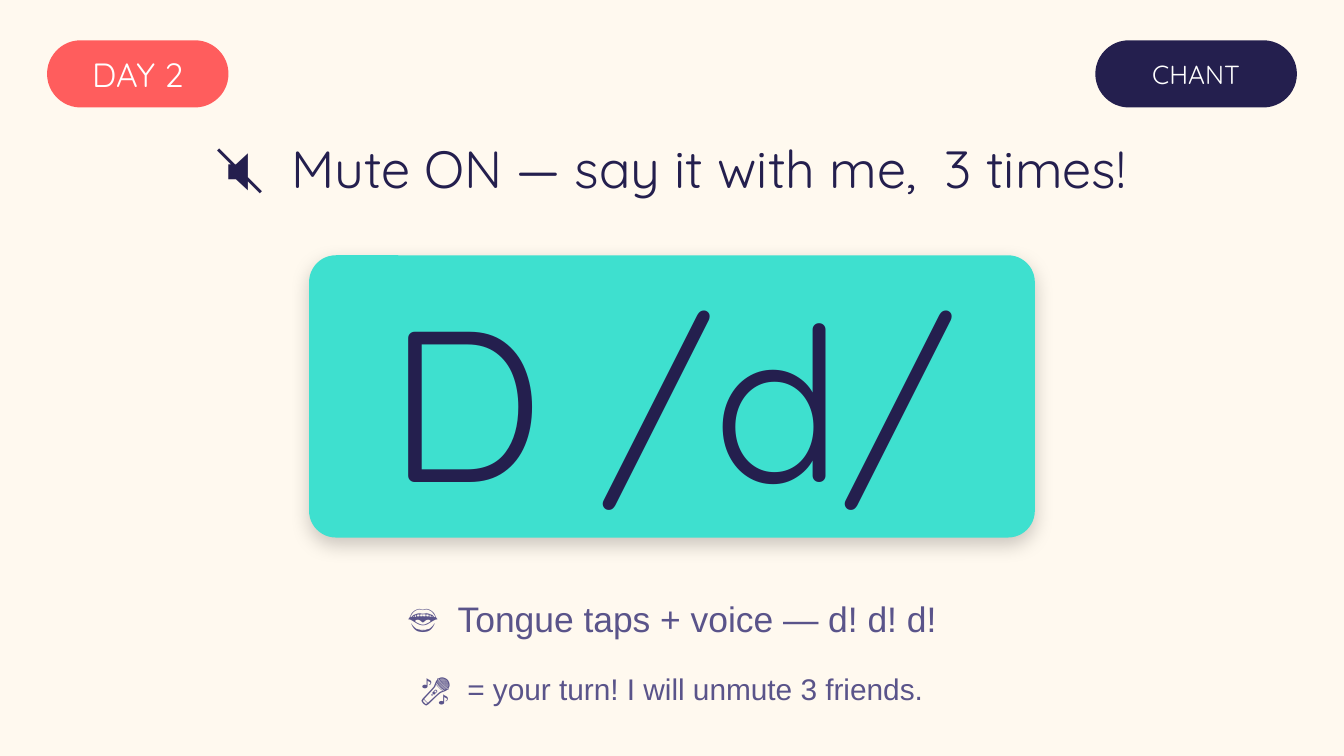
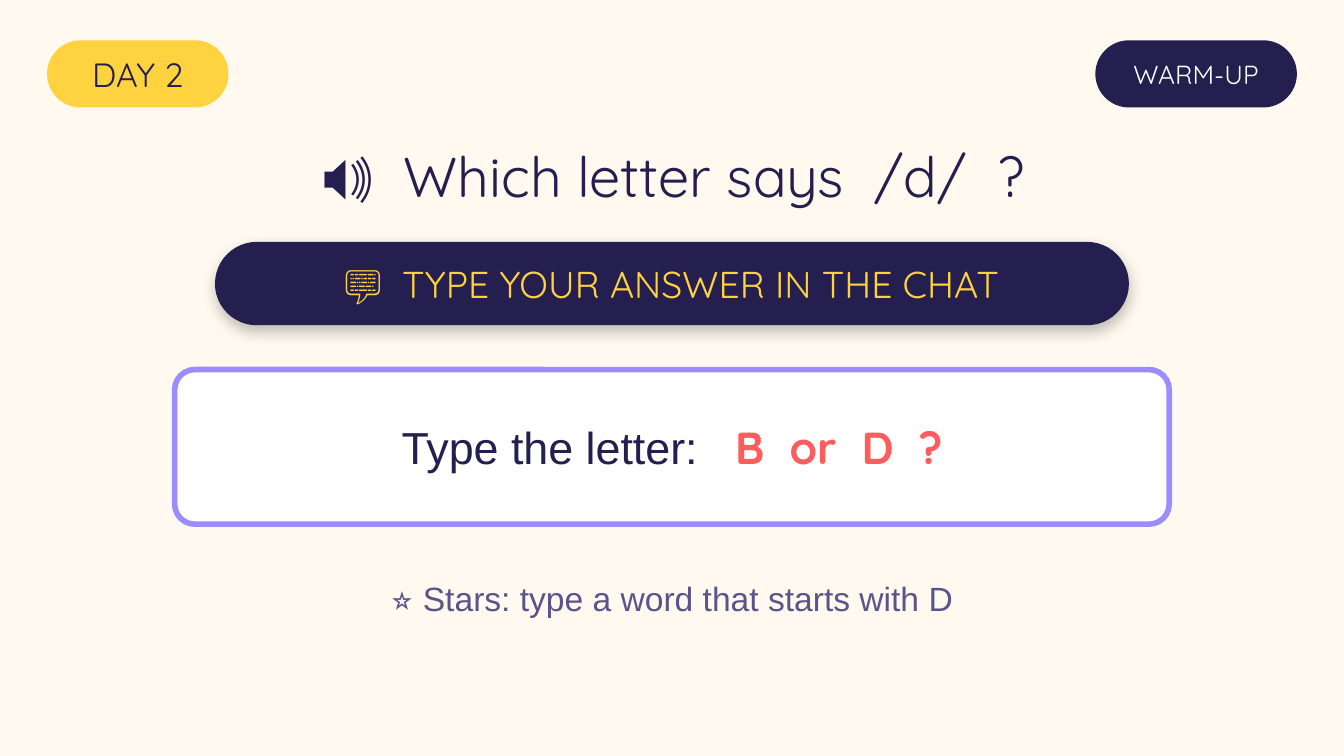
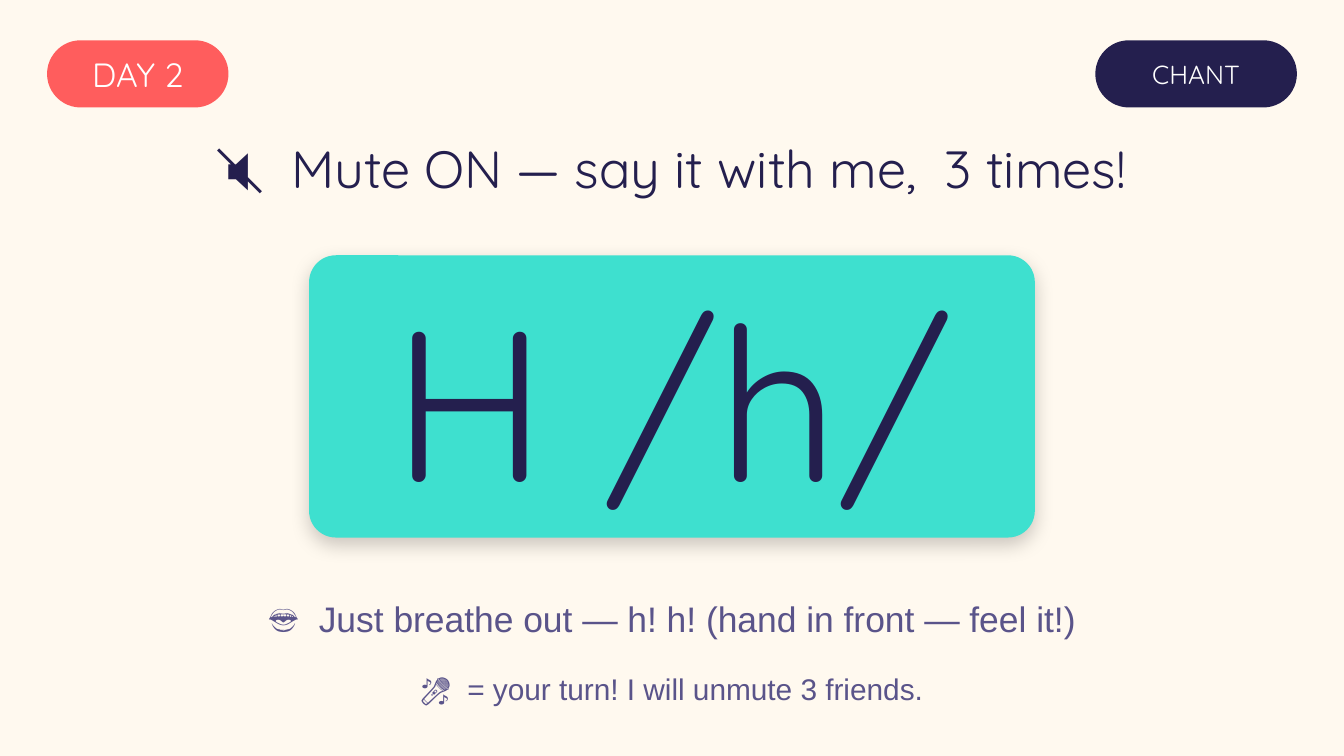
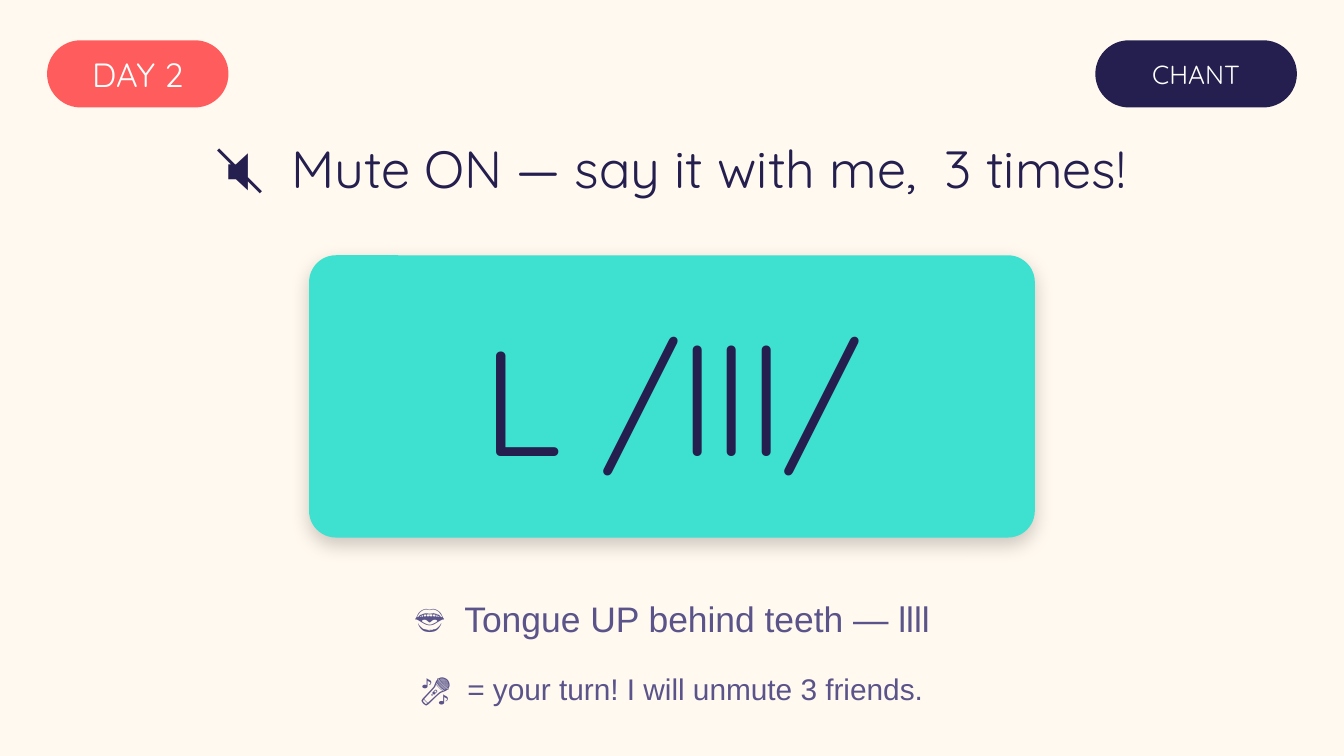
import pptx
import pptx.util
import pptx.dml.color
import pptx.enum.shapes
import pptx.enum.text
import pptx.oxml
import pptx.oxml.ns

Inches = pptx.util.Inches
WIDE = 10
HIGH = WIDE * 9 / 16
CREAM, WHITE, NAVY, PLUM = "FFF9EF", "FFFFFF", "241F4E", "5A548A"
CORAL, GOLD, TEAL, LILAC = "FF5D5D", "FFD23F", "3EE0CF", "9B8CFF"
ROUND, PLAIN = "Quicksand", "Arial"
FRAME = {
    "word_wrap": True,
    "vertical_anchor": pptx.enum.text.MSO_ANCHOR.MIDDLE,
    "margin_left": 0, "margin_right": 0, "margin_top": 0, "margin_bottom": 0,
}


def paint(hue):
    return pptx.dml.color.RGBColor.from_string(hue)


def apply(target, values):
    for name, value in values.items():
        setattr(target, name, value)


def style(size, hue, name=ROUND, bold=False):
    return {"size": size, "hue": hue, "name": name, "bold": bold}


def write(shape, *runs):
    frame = shape.text_frame
    apply(frame, FRAME)
    line = frame.paragraphs[0]
    line.alignment = pptx.enum.text.PP_ALIGN.CENTER
    for text, look in runs:
        run = line.add_run()
        run.text = text
        apply(run.font, {"size": pptx.util.Pt(look["size"]),
                         "name": look["name"], "bold": look["bold"]})
        run.font.color.rgb = paint(look["hue"])


def label(slide, box, text, look):
    area = slide.shapes.add_textbox(*map(Inches, box))
    write(area, (text, look))


def shade(shape, alpha, blur, drop):
    tag = pptx.oxml.ns.nsdecls("a")
    glow = pptx.oxml.parse_xml(
        f'<a:outerShdw {tag} blurRad="{pptx.util.Pt(blur)}" '
        f'dist="{pptx.util.Pt(drop)}" dir="5400000" algn="bl" rotWithShape="0">'
        f'<a:srgbClr val="000000"><a:alpha val="{alpha * 1000}"/></a:srgbClr>'
        '</a:outerShdw>')
    shape.element.spPr.find(pptx.oxml.ns.qn("a:effectLst")).append(glow)


def panel(slide, box, fill, bend, *runs, edge=None, shadow=None):
    kind = pptx.enum.shapes.MSO_SHAPE.ROUNDED_RECTANGLE
    shape = slide.shapes.add_shape(kind, *map(Inches, box))
    shape.adjustments[0] = bend
    shape.fill.solid()
    shape.fill.fore_color.rgb = paint(fill)
    shape.shadow.inherit = False
    if edge:
        shape.line.color.rgb = paint(edge)
        shape.line.width = pptx.util.Pt(3)
    else:
        shape.line.fill.background()
    if shadow:
        shade(shape, *shadow)
    write(shape, *runs)


def header(slide, box, fill, ink, topic):
    left, top, width, height = box
    day, tag = 1.35, 1.5
    panel(slide, (left, top, day, height), fill, 0.5, ("DAY 2", style(18, ink)))
    panel(slide, (left + width - tag, top, tag, height), NAVY, 0.5,
          (topic, style(14, WHITE)))


def start(deck, fill, ink, topic):
    slide = deck.slides.add_slide(deck.slide_layouts[6])
    back = slide.background.fill
    back.solid()
    back.fore_color.rgb = paint(CREAM)
    header(slide, (0.35, 0.3, WIDE - 0.7, 0.5), fill, ink, topic)
    return slide


def chant(slide, box, sound, size, hint):
    left, top, width, height = box
    card = 5.4
    label(slide, (left, top, width, 0.6),
          "🔇  Mute ON — say it with me,  3 times!", style(28, NAVY))
    panel(slide, (left + (width - card) / 2, top + 0.95, card, 2.1), TEAL, 0.095,
          (sound, style(size, NAVY)), shadow=(20, 10, 4))
    label(slide, (left, top + 3.4, width, 0.5), "👄  " + hint,
          style(19, PLUM, PLAIN))
    label(slide, (left, top + height - 0.45, width, 0.45),
          "🎤  = your turn! I will unmute 3 friends.", style(16, PLUM, PLAIN))


def warm(slide, box):
    left, top, width, height = box
    bar, card = 6.8, 7.4
    label(slide, (left, top, width, 0.7),
          "🔊  Which letter says  /d/  ?", style(30, NAVY))
    panel(slide, (left + (width - bar) / 2, top + 0.85, bar, 0.62), NAVY, 0.5,
          ("💬  TYPE YOUR ANSWER IN THE CHAT", style(20, GOLD)),
          shadow=(25, 8, 3))
    panel(slide, (left + (width - card) / 2, top + 1.8, card, 1.15), WHITE, 0.13,
          ("Type the letter:   ", style(24, NAVY, PLAIN)),
          ("B  or  D  ?", style(24, CORAL, bold=True)), edge=LILAC)
    label(slide, (left, top + height - 0.5, width, 0.5),
          "⭐ Stars: type a word that starts with D", style(18, PLUM, PLAIN))


def main():
    deck = pptx.Presentation()
    apply(deck, {"slide_width": Inches(WIDE), "slide_height": Inches(HIGH)})
    chants = [
        ("D /d/", 115, "Tongue taps + voice — d! d! d!"),
        ("H /h/", 115, "Just breathe out — h! h! (hand in front — feel it!)"),
        ("L /lll/", 80, "Tongue UP behind teeth — llll"),
    ]
    for spot, words in enumerate(chants):
        chant(start(deck, CORAL, WHITE, "CHANT"), (0, 0.95, WIDE, 4.4), *words)
        if spot == 0:
            warm(start(deck, GOLD, NAVY, "WARM-UP"), (0, 0.95, WIDE, 3.75))
    deck.save("out.pptx")


if __name__ == "__main__":
    main()
